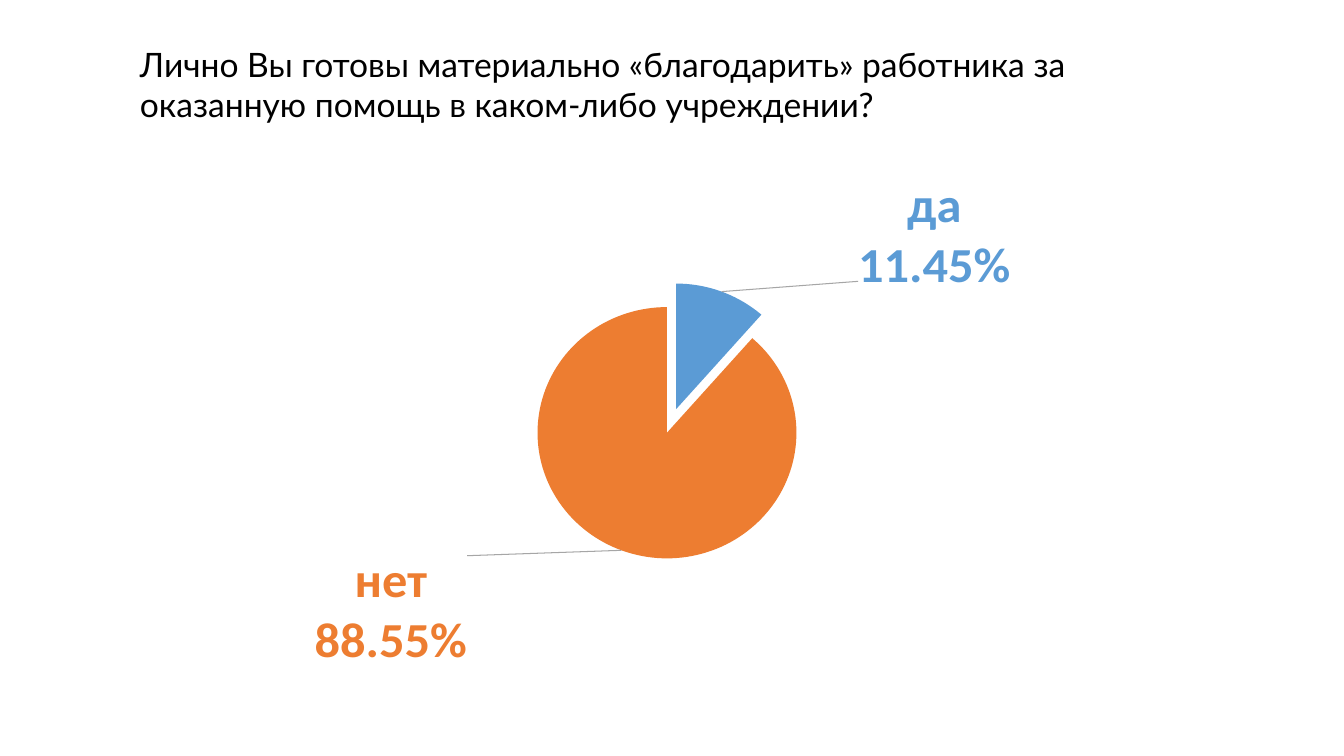
from lxml import etree
from pptx import Presentation
from pptx import util as u
from pptx.chart import data as cd
from pptx.dml import color
from pptx.enum import chart as ch
from pptx.oxml import ns

PX = 914400 / 100.8
ANSWERS = [
    ("да", 0.1145, "5B9BD5", 20, 137, -5),
    ("нет", 0.8855, "ED7D31", 0, -155, 0),
]


def px(n):
    return u.Emu(round(n * PX))


def rgb(value):
    return color.RGBColor.from_string(value)


def c_element(tag, **attrs):
    el = etree.Element(ns.qn(f"c:{tag}"))
    for name, value in attrs.items():
        el.set(name, str(value))
    return el


def manual_layout(**values):
    layout = c_element("layout")
    manual = c_element("manualLayout")
    layout.append(manual)
    for tag, value in values.items():
        manual.append(c_element(tag, val=value))
    return layout


def add_question(s, x, y, w, h, wording):
    sp = s.shapes.add_textbox(px(x), px(y), px(w), px(h))
    tf = sp.text_frame
    tf.word_wrap = True
    r = tf.paragraphs[0].add_run()
    r.text = wording
    r.font.size = u.Pt(24)
    r.font.name = "Lato"
    r.font.color.rgb = rgb("000000")


def style_answer(point, answer, w, h):
    _, _, hue, explosion, dx, dy = answer
    point.format.fill.solid()
    point.format.fill.fore_color.rgb = rgb(hue)
    point.format.line.fill.background()

    label = point.data_label
    label.font.size = u.Pt(36)
    label.font.bold = True
    label.font.name = "Calibri"
    label.font.color.rgb = rgb(hue)
    label.position = ch.XL_LABEL_POSITION.OUTSIDE_END
    return explosion, manual_layout(x=round(dx / w, 2), y=round(dy / h, 2))


def add_answers_pie(s, x, y, w, h):
    data = cd.CategoryChartData(number_format="0.00%")
    data.categories = [a[0] for a in ANSWERS]
    data.add_series("Series 1", [a[1] for a in ANSWERS])
    frame = s.shapes.add_chart(
        ch.XL_CHART_TYPE.PIE, px(x), px(y), px(w), px(h), data)
    chart = frame.chart
    chart.has_legend = False
    chart.has_title = False
    chart.font.size = u.Pt(36)
    chart.font.name = "Calibri"
    chart.font.color.rgb = rgb("000000")
    plot = chart.plots[0]
    plot.vary_by_categories = True
    series = plot.series[0]

    labels = series.data_labels
    labels.number_format = "0.00%"
    labels.number_format_is_linked = False
    labels.show_value = True
    labels.show_category_name = True
    labels.position = ch.XL_LABEL_POSITION.OUTSIDE_END

    ser = series._element
    for i, answer in enumerate(ANSWERS):
        explosion, offset = style_answer(series.points[i], answer, w, h)
        dpt = ser.xpath(f"c:dPt[c:idx/@val='{i}']")[0]
        dpt.find(ns.qn("c:spPr")).addprevious(
            c_element("explosion", val=explosion))
        dlbl = ser.xpath(f"c:dLbls/c:dLbl[c:idx/@val='{i}']")[0]
        dlbl.find(ns.qn("c:idx")).addnext(offset)
        dlbl.find(ns.qn("c:txPr")).addprevious(
            c_element("numFmt", formatCode="0.00%", sourceLinked=0))
        dlbl.find(ns.qn("c:showCatName")).set("val", "1")
        separator = c_element("separator")
        separator.text = "\n"
        dlbl.append(separator)

    dlbls = ser.find(ns.qn("c:dLbls"))
    for old in dlbls.findall(ns.qn("c:showLeaderLines")):
        dlbls.remove(old)
    separator = c_element("separator")
    separator.text = "\n"
    leader = c_element("leaderLines")
    sp_pr = c_element("spPr")
    leader.append(sp_pr)
    ln = etree.SubElement(sp_pr, ns.qn("a:ln"), w="9525")
    fill = etree.SubElement(ln, ns.qn("a:solidFill"))
    etree.SubElement(fill, ns.qn("a:srgbClr"), val="A6A6A6")
    dlbls.extend([separator, c_element("showLeaderLines", val=1), leader])

    area = chart._chartSpace.xpath("c:chart/c:plotArea")[0]
    for old in area.findall(ns.qn("c:layout")):
        area.remove(old)
    area.insert(0, manual_layout(
        layoutTarget="inner", xMode="edge", yMode="edge",
        x=round(314 / w, 3), y=round(135 / h, 3),
        w=round(259 / w, 3), h=round(259 / h, 3)))


def main():
    prs = Presentation()
    prs.slide_width, prs.slide_height = px(1344), px(756)
    s = prs.slides.add_slide(prs.slide_layouts[6])
    add_question(
        s, 130, 39, 1067, 92,
        "Лично Вы готовы материально «благодарить» работника за "
        "оказанную помощь в каком-либо учреждении?")
    add_answers_pie(s, 224, 166, 896, 510)
    prs.save("out.pptx")


if __name__ == "__main__":
    main()
